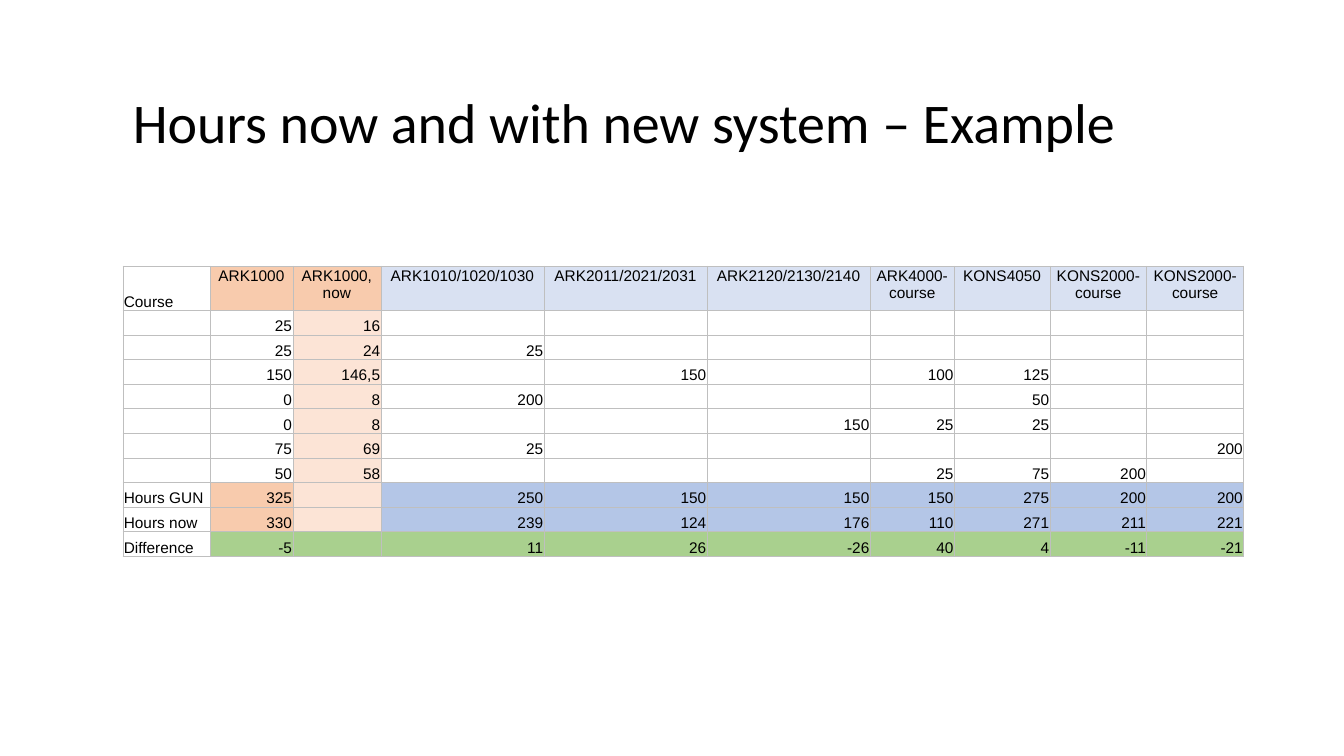
from lxml.etree import SubElement
from pptx import Presentation
from pptx.dml.color import RGBColor as RGB
from pptx.enum.text import MSO_ANCHOR as Anchor, PP_ALIGN as Align
from pptx.oxml.ns import qn
from pptx.util import Cm, Pt

TITLE = "Hours now and with new system – Example"
HEAD = ["Course", "ARK1000", "ARK1000, now", "ARK1010/1020/1030",
        "ARK2011/2021/2031", "ARK2120/2130/2140", "ARK4000-course",
        "KONS4050", "KONS2000-course", "KONS2000-course"]
STAFF = [
    ["", "25", "16", "", "", "", "", "", "", ""],
    ["", "25", "24", "25", "", "", "", "", "", ""],
    ["", "150", "146,5", "", "150", "", "100", "125", "", ""],
    ["", "0", "8", "200", "", "", "", "50", "", ""],
    ["", "0", "8", "", "", "150", "25", "25", "", ""],
    ["", "75", "69", "25", "", "", "", "", "", "200"],
    ["", "50", "58", "", "", "", "25", "75", "200", ""],
]
TOTALS = [
    ["Hours GUN", "325", "", "250", "150", "150", "150", "275", "200", "200"],
    ["Hours now", "330", "", "239", "124", "176", "110", "271", "211", "221"],
]
DIFF = ["Difference", "-5", "", "11", "26", "-26", "40", "4", "-11", "-21"]
ROWS = [HEAD, *STAFF, *TOTALS, DIFF]

WIDTHS = [2.19, 2.09, 2.22, 4.11, 4.11, 4.11, 2.12, 2.41, 2.44, 2.44]
HEAD_H, ROW_H = 1.11, 0.62
LEFT, TOP = 3.1, 6.71
INSET = 0.02

COLORS = {"text": "000000", "grid": "BFBFBF", "peach": "F8CBAD",
          "blush": "FCE4D6", "pale": "D9E1F2", "blue": "B4C6E7",
          "green": "A9D08E"}


def shade(row, col):
    """Name the fill of a cell, or None where it stays clear."""
    last = len(ROWS) - 1
    total = last - len(TOTALS) <= row < last
    if col == 0:
        return None
    if row == last:
        return "green"
    if row == 0:
        return "peach" if col < 3 else "pale"
    if col == 2:
        return "blush"
    if total:
        return "peach" if col == 1 else "blue"
    return None


def write(para, text, font, size):
    run = para.add_run()
    run.text = text
    run.font.name = font
    run.font.size = Pt(size)
    run.font.color.rgb = RGB.from_string(COLORS["text"])


def edge(cell):
    """Put a thin grid line on all four sides; call before filling."""
    props = cell._tc.get_or_add_tcPr()
    for side in ("a:lnL", "a:lnR", "a:lnT", "a:lnB"):
        line = SubElement(props, qn(side), w=str(Pt(0.5)))
        fill = SubElement(line, qn("a:solidFill"))
        SubElement(fill, qn("a:srgbClr"), val=COLORS["grid"])


def style(cell, text, row, col):
    edge(cell)
    name = shade(row, col)
    if name:
        cell.fill.solid()
        cell.fill.fore_color.rgb = RGB.from_string(COLORS[name])
    else:
        cell.fill.background()
    cell.margin_left = cell.margin_right = cell.margin_top = Cm(INSET)
    cell.margin_bottom = 0
    top = row == 0 and col > 0
    cell.vertical_anchor = Anchor.TOP if top else Anchor.BOTTOM
    para = cell.text_frame.paragraphs[0]
    if col:
        para.alignment = Align.CENTER if top else Align.RIGHT
    if text:
        write(para, text, "Arial", 11)
    else:
        # Keeps an empty cell from stretching its row
        SubElement(para._p, qn("a:endParaRPr"), sz="1100")


def add_title(slide):
    box = slide.shapes.add_textbox(Cm(LEFT), Cm(1.52), Cm(28.24), Cm(3.28))
    frame = box.text_frame
    frame.word_wrap = True
    frame.vertical_anchor = Anchor.MIDDLE
    para = frame.paragraphs[0]
    para.line_spacing = 0.9
    write(para, TITLE, "Calibri", 40)


def add_hours(slide):
    high = HEAD_H + ROW_H * (len(ROWS) - 1)
    table = slide.shapes.add_table(
        len(ROWS), len(HEAD), Cm(LEFT), Cm(TOP),
        Cm(sum(WIDTHS)), Cm(high)).table
    table.first_row = table.horz_banding = False
    for col, width in enumerate(WIDTHS):
        table.columns[col].width = Cm(width)
    for row, texts in enumerate(ROWS):
        table.rows[row].height = Cm(ROW_H if row else HEAD_H)
        for col, text in enumerate(texts):
            style(table.cell(row, col), text, row, col)


def main():
    deck = Presentation()
    deck.slide_width, deck.slide_height = Cm(33.87), Cm(19.05)
    slide = deck.slides.add_slide(deck.slide_layouts[6])
    add_title(slide)
    add_hours(slide)
    deck.save("out.pptx")


if __name__ == "__main__":
    main()
